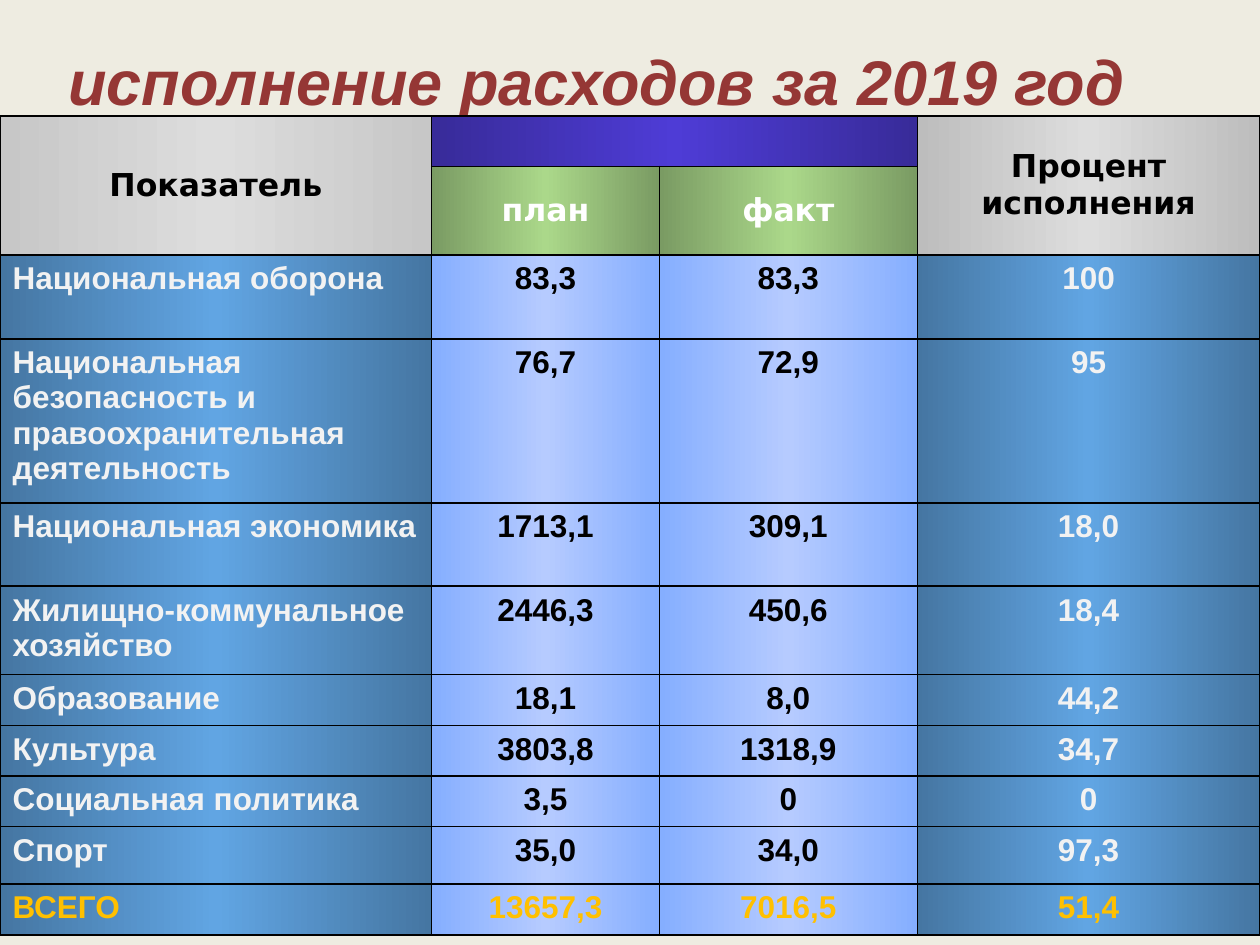
from lxml.etree import SubElement
from pptx import Presentation
from pptx.dml.color import RGBColor
from pptx.enum.text import MSO_ANCHOR, MSO_AUTO_SIZE, PP_ALIGN
from pptx.oxml.ns import qn
from pptx.util import Pt

BACKGROUND = "EEECE1"
TITLE = "исполнение расходов за 2019 год "
ROWS = [
    ("Показатель", "", "", "Процент исполнения"),
    ("", "план", "факт", ""),
    ("Национальная оборона", "83,3", "83,3", "100"),
    ("Национальная безопасность и правоохранительная деятельность", "76,7", "72,9", "95"),
    ("Национальная экономика", "1713,1", "309,1", "18,0"),
    ("Жилищно-коммунальное хозяйство", "2446,3", "450,6", "18,4"),
    ("Образование", "18,1", "8,0", "44,2"),
    ("Культура", "3803,8", "1318,9", "34,7"),
    ("Социальная политика", "3,5", "0", "0"),
    ("Спорт", "35,0", "34,0", "97,3"),
    ("ВСЕГО", "13657,3", "7016,5", "51,4"),
]
HEADER_ROWS = 2
COLUMN_WIDTHS = [246.7, 130.1, 147.4, 195.8]
ROW_HEIGHTS = [28.2, 50.6, 48, 93.7, 47.7, 50.6, 28.9, 28.9, 28.7, 33, 29]
MERGES = [((0, 0), (1, 0)), ((0, 1), (0, 2)), ((0, 3), (1, 3))]

SILVER = ("C7C7C7", "DDDDDD")
GREY = ("BDBDBD", "DDDDDD")
INDIGO = ("382B99", "4E3CD6")
GREEN = ("7A9B63", "ABD88A")
BLUE = ("4576A2", "61A5E3")
PALE = ("85AEFF", "B6CBFF")
HEADER_FILLS = [(SILVER, INDIGO, INDIGO, GREY), (SILVER, GREEN, GREEN, GREY)]
BODY_FILLS = (BLUE, PALE, PALE, BLUE)
HEADER_COLORS = ("000000", "FFFFFF")
BODY_COLORS = ("F2F2F2", "000000", "000000", "F2F2F2")
TOTAL_COLOR = "FFC000"

TITLE_FONT = {"name": "Arial", "size": Pt(36), "bold": True, "italic": True}
HEADER_FONT = {"name": "DejaVu Sans", "size": Pt(18), "bold": True}
BODY_FONT = {"name": "Arial", "size": Pt(18), "bold": True}


def rgb(color):
    return RGBColor.from_string(color)


def write(para, text, font, color, align):
    para.alignment = align
    span = para.add_run()
    span.text = text
    for name, value in font.items():
        setattr(span.font, name, value)
    span.font.color.rgb = rgb(color)
    return span


def add_solid(parent, color):
    solid = SubElement(parent, qn("a:solidFill"))
    SubElement(solid, qn("a:srgbClr"), val=color)


def paint(cell, edge, middle):
    properties = cell._tc.get_or_add_tcPr()
    for side in ("a:lnL", "a:lnR", "a:lnT", "a:lnB"):
        add_solid(SubElement(properties, qn(side), w=str(Pt(1))), "000000")
    gradient = SubElement(properties, qn("a:gradFill"), rotWithShape="1")
    stops = SubElement(gradient, qn("a:gsLst"))
    for position, color in ((0, edge), (50, middle), (100, edge)):
        stop = SubElement(stops, qn("a:gs"), pos=str(position * 1000))
        SubElement(stop, qn("a:srgbClr"), val=color)
    SubElement(gradient, qn("a:lin"), ang="0", scaled="1")


def add_title(page):
    box = page.shapes.add_textbox(Pt(14.4), Pt(20.9), Pt(663.1), Pt(51.1))
    box.text_frame.word_wrap = True
    box.text_frame.auto_size = MSO_AUTO_SIZE.SHAPE_TO_FIT_TEXT
    span = write(box.text_frame.paragraphs[0], TITLE, TITLE_FONT, "953735", PP_ALIGN.CENTER)
    outline = span.font._element.makeelement(qn("a:ln"), {"w": str(Pt(0.75))})
    add_solid(outline, "FF99FF")
    span.font._element.insert(0, outline)


def add_spending_table(page):
    frame = page.shapes.add_table(
        len(ROWS), len(COLUMN_WIDTHS), Pt(0), Pt(66.2),
        Pt(sum(COLUMN_WIDTHS)), Pt(sum(ROW_HEIGHTS)))
    table = frame.table
    table.first_row = table.horz_banding = False
    for column, width in zip(table.columns, COLUMN_WIDTHS):
        column.width = Pt(width)
    for row, height in zip(table.rows, ROW_HEIGHTS):
        row.height = Pt(height)
    for first, last in MERGES:
        table.cell(*first).merge(table.cell(*last))

    for r, texts in enumerate(ROWS):
        header = r < HEADER_ROWS
        fills = HEADER_FILLS[r] if header else BODY_FILLS
        for c, text in enumerate(texts):
            cell = table.cell(r, c)
            paint(cell, *fills[c])
            if not text:
                continue
            para = cell.text_frame.paragraphs[0]
            if header:
                cell.vertical_anchor = MSO_ANCHOR.MIDDLE
                para.space_before = Pt(3.6)
                write(para, text, HEADER_FONT, HEADER_COLORS[r], PP_ALIGN.CENTER)
            else:
                color = TOTAL_COLOR if r == len(ROWS) - 1 else BODY_COLORS[c]
                align = PP_ALIGN.CENTER if c else PP_ALIGN.LEFT
                write(para, text, BODY_FONT, color, align)


def main():
    deck = Presentation()
    deck.slide_width, deck.slide_height = Pt(720), Pt(540)
    page = deck.slides.add_slide(deck.slide_layouts[6])
    page.background.fill.solid()
    page.background.fill.fore_color.rgb = rgb(BACKGROUND)
    add_title(page)
    add_spending_table(page)
    deck.save("out.pptx")


if __name__ == "__main__":
    main()
